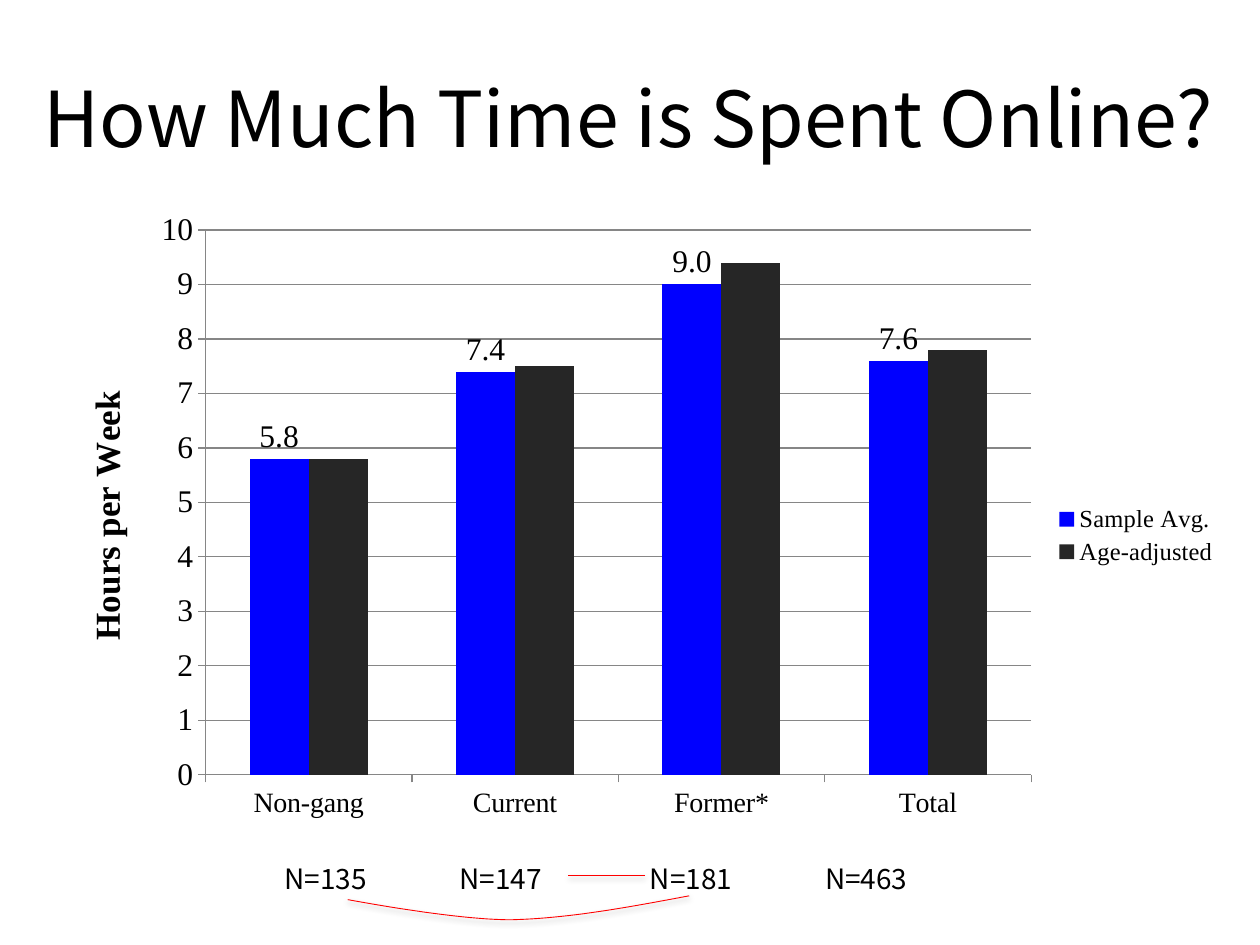
from dataclasses import dataclass

from lxml import etree
from pptx import Presentation
from pptx.chart.data import CategoryChartData
from pptx.dml.color import RGBColor
from pptx.enum.chart import XL_CHART_TYPE as ChartType, XL_LABEL_POSITION as LabelPos
from pptx.enum.chart import XL_LEGEND_POSITION as LegendPos, XL_TICK_MARK as Tick
from pptx.enum.shapes import MSO_CONNECTOR as Connector
from pptx.enum.text import MSO_ANCHOR as Anchor, PP_ALIGN as Align
from pptx.oxml import parse_xml
from pptx.oxml.ns import qn
from pptx.util import Inches, Pt


@dataclass(frozen=True)
class Theme:
    sans: str = "Noto Sans CJK JP"
    serif: str = "Times New Roman"
    text: RGBColor = RGBColor(0, 0, 0)
    sample: RGBColor = RGBColor(0, 0, 0xFF)
    adjusted: RGBColor = RGBColor(0x26, 0x26, 0x26)
    grid: RGBColor = RGBColor(0x86, 0x86, 0x86)
    mark: RGBColor = RGBColor(0xFF, 0, 0)
    title: int = 44
    axis_title: int = 20
    chart: int = 18
    note: int = 16
    legend: int = 14


T = Theme()
GROUPS = ["Non-gang", "Current", "Former*", "Total"]
SERIES = [("Sample Avg.", [5.8, 7.4, 9.0, 7.6], T.sample),
          ("Age-adjusted", [5.8, 7.5, 9.4, 7.8], T.adjusted)]
COUNTS = ["N=135", "N=147", "N=181", "N=463"]
COUNT_TABS = [1.39, 2.9, 4.29]
A_NS = "http://schemas.openxmlformats.org/drawingml/2006/main"
SHADOW = (f'<a:effectLst xmlns:a="{A_NS}"><a:outerShdw blurRad="40000" dist="22000" '
          'dir="5400000" rotWithShape="0"><a:srgbClr val="000000">'
          '<a:alpha val="35000"/></a:srgbClr></a:outerShdw></a:effectLst>')


def set_font(font, size, name, bold=False):
    font.color.rgb = T.text
    for key, value in {"size": Pt(size), "name": name, "bold": bold}.items():
        setattr(font, key, value)


def add_text(s, box, text, size, **frame_format):
    tf = s.shapes.add_textbox(*map(Inches, box)).text_frame
    for key, value in {"word_wrap": True, **frame_format}.items():
        setattr(tf, key, value)
    p = tf.paragraphs[0]
    r = p.add_run()
    r.text = text
    set_font(r.font, size, T.sans)
    return p


def add_title(s, box):
    p = add_text(s, box, "How Much Time is Spent Online?", T.title,
                 vertical_anchor=Anchor.MIDDLE)
    p.alignment = Align.CENTER


def set_plot_layout(chart, x, y, w, h):
    area = chart.plots[0]._element.getparent()
    for old in area.findall(qn("c:layout")):
        area.remove(old)
    layout = etree.Element(qn("c:layout"))
    manual = etree.SubElement(layout, qn("c:manualLayout"))
    values = {"layoutTarget": "inner", "xMode": "edge", "yMode": "edge",
              "x": x, "y": y, "w": w, "h": h}
    for key, value in values.items():
        etree.SubElement(manual, qn(f"c:{key}")).set("val", str(value))
    area.insert(0, layout)


def add_hours_chart(s, box):
    data = CategoryChartData()
    data.categories = GROUPS
    for name, values, _ in SERIES:
        data.add_series(name, values)
    chart = s.shapes.add_chart(ChartType.COLUMN_CLUSTERED, *map(Inches, box), data).chart
    chart.has_title = False
    set_font(chart.font, T.chart, T.serif)
    set_plot_layout(chart, 0.122, 0.051, 0.707, 0.801)

    # Columns, with values above the sample averages
    plot = chart.plots[0]
    for key, value in {"gap_width": 150, "overlap": 0, "vary_by_categories": False}.items():
        setattr(plot, key, value)
    for series, (_, _, color) in zip(plot.series, SERIES):
        series.format.fill.solid()
        series.format.fill.fore_color.rgb = color
    labels = plot.series[0].data_labels
    for key, value in {"show_value": True, "number_format": "0.0",
                       "number_format_is_linked": False,
                       "position": LabelPos.OUTSIDE_END}.items():
        setattr(labels, key, value)
    set_font(labels.font, T.chart, T.serif)

    # Axes
    hours, groups = chart.value_axis, chart.category_axis
    for axis, size in ((hours, T.chart), (groups, T.note)):
        axis.major_tick_mark = Tick.OUTSIDE
        axis.format.line.color.rgb = T.grid
        set_font(axis.tick_labels.font, size, T.serif)
    for key, value in {"minimum_scale": 0, "maximum_scale": 10, "major_unit": 1}.items():
        setattr(hours, key, value)
    hours.major_gridlines.format.line.color.rgb = T.grid
    hours.tick_labels.number_format = "0"
    hours.tick_labels.number_format_is_linked = False
    r = hours.axis_title.text_frame.paragraphs[0].add_run()
    r.text = "Hours per Week"
    set_font(r.font, T.axis_title, T.serif, bold=True)

    # Legend
    chart.has_legend = True
    chart.legend.position = LegendPos.RIGHT
    chart.legend.include_in_layout = False
    set_font(chart.legend.font, T.legend, T.serif)


def style_mark(sp):
    sp.line.color.rgb = T.mark
    sp.line.width = Pt(0.5)
    props = sp._element.spPr
    for old in props.findall(qn("a:effectLst")):
        props.remove(old)
    props.append(parse_xml(SHADOW))


def bezier(p0, p1, p2, p3, steps=24):
    for i in range(1, steps + 1):
        t = i / steps
        u = 1 - t
        yield tuple(u**3 * a + 3 * u * u * t * b + 3 * u * t * t * c + t**3 * d
                    for a, b, c, d in zip(p0, p1, p2, p3))


def add_counts(s, box):
    left, top = box[:2]
    # Group sizes on tab stops
    p = add_text(s, box, "\t".join(COUNTS), T.note)
    tabs = etree.SubElement(p._p.get_or_add_pPr(), qn("a:tabLst"))
    for stop in COUNT_TABS:
        etree.SubElement(tabs, qn("a:tab"), pos=str(Inches(stop)), algn="l")

    # Line from former to current members
    y = Inches(top + 0.16)
    style_mark(s.shapes.add_connector(Connector.STRAIGHT, Inches(left + 2.96), y,
                                      Inches(left + 2.35), y))

    # Curve from former to non-gang members
    start, low, end = (3.31, 0.32), (1.89, 0.51), (0.6, 0.35)
    curve = [*bezier(start, (2.83, 0.41), (2.35, 0.5), low),
             *bezier(low, (1.44, 0.51), end, end)]
    points = [(Inches(left + x), Inches(top + y)) for x, y in [start, *curve]]
    builder = s.shapes.build_freeform(*points[0])
    builder.add_line_segments(points[1:], close=False)
    sp = builder.convert_to_shape()
    sp.fill.background()
    style_mark(sp)


def main():
    prs = Presentation()
    prs.slide_width, prs.slide_height = Inches(10), Inches(7.5)
    s = prs.slides.add_slide(prs.slide_layouts[6])
    add_title(s, (0.21, 0.3, 9.56, 1.25))
    add_hours_chart(s, (0.5, 1.55, 9.27, 5.4))
    add_counts(s, (2.16, 6.79, 5.46, 0.37))
    prs.save("out.pptx")


if __name__ == "__main__":
    main()
